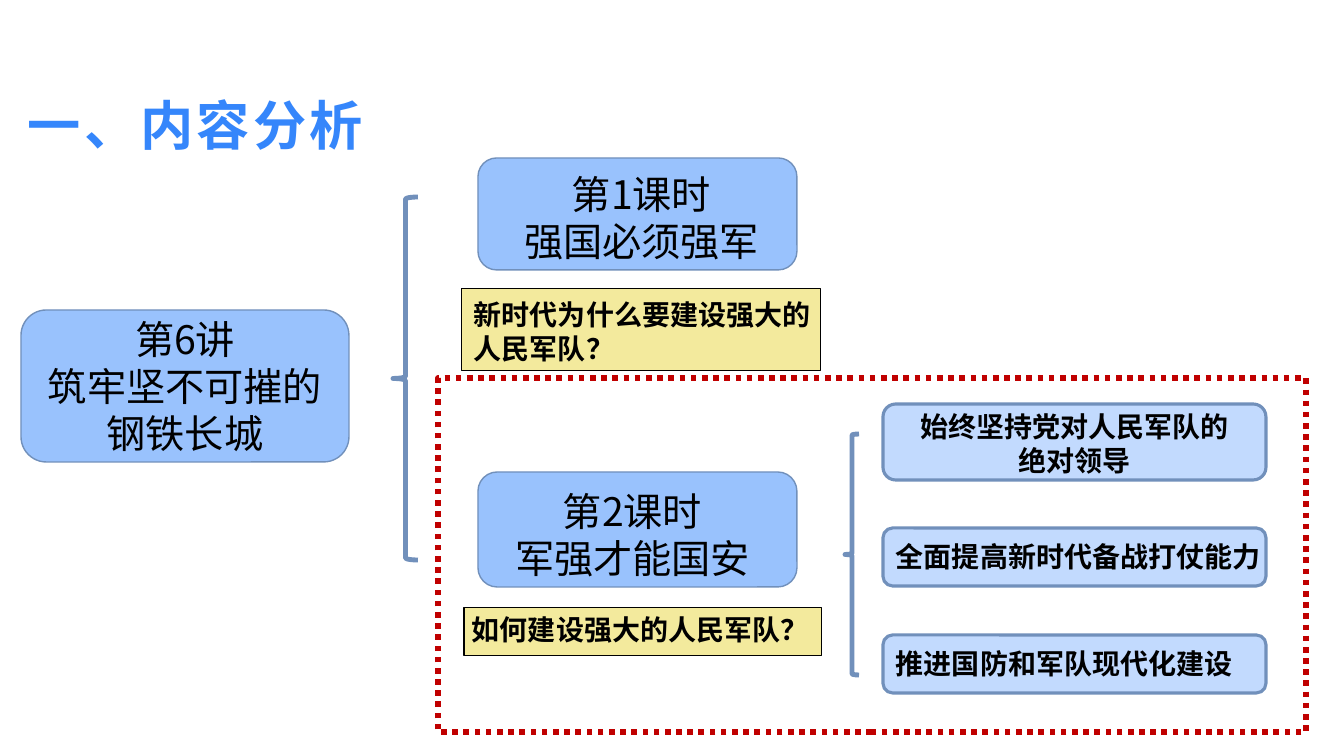
from lxml.etree import SubElement
from pptx import Presentation
from pptx.dml.color import RGBColor
from pptx.enum.dml import MSO_LINE
from pptx.enum.shapes import MSO_SHAPE
from pptx.enum.text import MSO_ANCHOR, MSO_AUTO_SIZE, PP_ALIGN
from pptx.oxml.ns import qn
from pptx.util import Emu, Pt

EMU_PER_PX = 914400 / 100.8
FONT = "Noto Sans CJK SC"
COLORS = {
    "title": "3586FB", "text": "000000", "card": "99C2FD", "point": "C2DAFE",
    "outline": "7190BB", "question": "F3EA9D", "frame": "C00000",
}
TITLE = {"size": Pt(38), "bold": True, "color": "title", "align": PP_ALIGN.LEFT}
HEADING = {"size": Pt(28), "bold": False, "color": "text", "align": PP_ALIGN.CENTER}
DETAIL = {"size": Pt(20), "bold": True, "color": "text", "align": PP_ALIGN.LEFT}
CENTERED_DETAIL = {**DETAIL, "align": PP_ALIGN.CENTER}


def px(length):
    return Emu(round(length * EMU_PER_PX))


def color(name):
    return RGBColor.from_string(COLORS[name])


def write_lines(text_frame, lines, style):
    for index, line in enumerate(lines):
        paragraph = text_frame.paragraphs[0] if index == 0 else text_frame.add_paragraph()
        paragraph.alignment = style["align"]
        run = paragraph.add_run()
        run.text = line
        for name, value in {"name": FONT, "size": style["size"], "bold": style["bold"]}.items():
            setattr(run.font, name, value)
        run.font.color.rgb = color(style["color"])
        SubElement(run.font._element, qn("a:ea"), typeface=FONT)


def add_shape(slide, kind, box, line, width, fill=None):
    shape = slide.shapes.add_shape(kind, *map(px, box))
    shape.shadow.inherit = False
    if fill:
        shape.fill.solid()
        shape.fill.fore_color.rgb = color(fill)
    else:
        shape.fill.background()
    shape.line.color.rgb = color(line)
    shape.line.width = Pt(width)
    return shape


def add_label(slide, box, lines, style):
    label = slide.shapes.add_textbox(*map(px, box))
    label.text_frame.word_wrap = True
    label.text_frame.auto_size = MSO_AUTO_SIZE.SHAPE_TO_FIT_TEXT
    write_lines(label.text_frame, lines, style)


def add_brace(slide, box):
    add_shape(slide, MSO_SHAPE.LEFT_BRACE, box, "outline", 3.5)


def draw_title(slide, box, text):
    title = slide.shapes.title
    title.left, title.top, title.width, title.height = map(px, box)
    frame_format = {
        "margin_left": px(7), "margin_right": px(7), "margin_top": px(3), "margin_bottom": px(3),
        "vertical_anchor": MSO_ANCHOR.BOTTOM, "auto_size": MSO_AUTO_SIZE.NONE, "word_wrap": True,
    }
    for name, value in frame_format.items():
        setattr(title.text_frame, name, value)
    write_lines(title.text_frame, [text], TITLE)
    title.text_frame.paragraphs[0].runs[0].font._element.set("spc", "220")


def draw_lecture(slide, box, lines):
    add_shape(slide, MSO_SHAPE.ROUNDED_RECTANGLE, box, "outline", 1, "card")
    add_label(slide, box, lines, HEADING)


def draw_lesson(slide, box, heading, heading_offset):
    left, top, width, height = box
    shift, drop = heading_offset
    add_shape(slide, MSO_SHAPE.ROUNDED_RECTANGLE, box, "outline", 1, "card")
    add_label(slide, (left + shift, top + drop, width - 10, 105), heading, HEADING)


def draw_question(slide, box, lines, text_offset):
    left, top, width, height = box
    shift, drop = text_offset
    add_shape(slide, MSO_SHAPE.RECTANGLE, box, "text", 0.75, "question")
    add_label(slide, (left + shift, top + drop, width, height - 4), lines, DETAIL)


def draw_point(slide, box, lines):
    left, top, width, height = box
    add_shape(slide, MSO_SHAPE.ROUNDED_RECTANGLE, box, "outline", 2.25, "point")
    if len(lines) > 1:
        add_label(slide, (left + 18, top + 1, width - 36, height + 2), lines, CENTERED_DETAIL)
    else:
        add_label(slide, (left + 3, top + 7, width + 75, 44), lines, DETAIL)


def draw_focus_frame(slide, box):
    frame = add_shape(slide, MSO_SHAPE.RECTANGLE, box, "frame", 4)
    frame.line.dash_style = MSO_LINE.ROUND_DOT


def main():
    presentation = Presentation()
    presentation.slide_width, presentation.slide_height = px(1344), px(756)
    slide = presentation.slides.add_slide(presentation.slide_layouts[5])

    draw_title(slide, (21, 81, 642, 78), "一、内容分析")

    # Lecture and its two lessons
    draw_lecture(slide, (21, 310, 328, 152), ["第6讲", "筑牢坚不可摧的", "钢铁长城"])
    add_brace(slide, (393, 197, 25, 363))
    draw_lesson(slide, (478, 158, 319, 112), ["第1课时", "强国必须强军"], (9, 7))
    draw_lesson(slide, (478, 472, 319, 115), ["第2课时", "军强才能国安"], (0, 10))

    # Question under each lesson
    draw_question(slide, (462, 289, 359, 82), ["新时代为什么要建设强大的", "人民军队？"], (2, 4))
    draw_question(slide, (464, 608, 358, 48), ["如何建设强大的人民军队？"], (-2, 0))

    # Points of the second lesson
    add_brace(slide, (845, 434, 14, 241))
    points = [
        (404, 76, ["始终坚持党对人民军队的", "绝对领导"]),
        (528, 58, ["全面提高新时代备战打仗能力"]),
        (635, 58, ["推进国防和军队现代化建设"]),
    ]
    for top, height, lines in points:
        draw_point(slide, (883, top, 383, height), lines)

    draw_focus_frame(slide, (438, 378, 868, 354))
    presentation.save("out.pptx")


if __name__ == "__main__":
    main()
